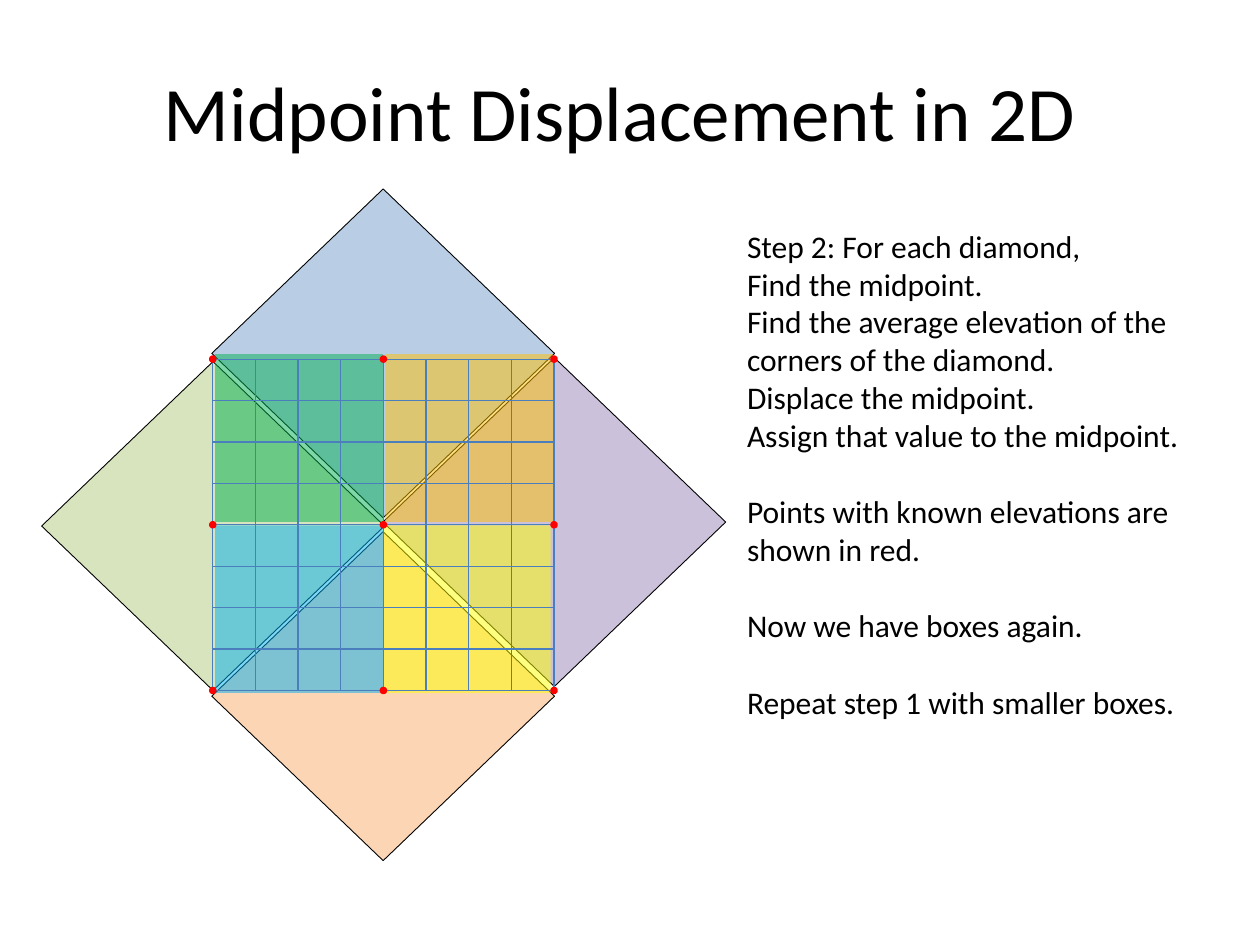
from lxml.etree import SubElement
from pptx import Presentation
from pptx.dml.color import RGBColor
from pptx.enum.shapes import MSO_CONNECTOR as Connector, MSO_SHAPE as Shape
from pptx.enum.text import MSO_ANCHOR as Anchor, MSO_AUTO_SIZE as AutoSize, PP_ALIGN as Align
from pptx.oxml.ns import qn
from pptx.util import Cm, Pt


def paint(shape, fill, line=None, width=0.5, opacity=100):
    shape.shadow.inherit = False
    shape.fill.solid()
    shape.fill.fore_color.rgb = RGBColor.from_string(fill)
    if opacity < 100:
        color = shape.fill._xPr.find(qn("a:solidFill"))[0]
        SubElement(color, qn("a:alpha"), val=str(opacity * 1000))
    if line:
        shape.line.color.rgb = RGBColor.from_string(line)
        shape.line.width = Pt(width)
    else:
        shape.line.fill.background()


def write(paragraph, text, size=18, color="000000", align=Align.LEFT, before=0):
    paragraph.alignment = align
    paragraph.space_before = Pt(before)
    run = paragraph.add_run()
    run.text = text
    run.font.name = "Calibri"
    run.font.size = Pt(size)
    run.font.color.rgb = RGBColor.from_string(color)


prs = Presentation()
prs.slide_width, prs.slide_height = Cm(25.4), Cm(19.05)
slide = prs.slides.add_slide(prs.slide_layouts[5])
shapes = slide.shapes

# Title
title = shapes.title
title.left, title.top, title.width, title.height = Cm(1.07), Cm(0.64), Cm(22.86), Cm(3.18)
title.text_frame.vertical_anchor = Anchor.MIDDLE
write(title.text_frame.paragraphs[0], "Midpoint Displacement in 2D", size=44, align=Align.CENTER)

# Diamonds around the grid: bottom, left, right, top
for left, top, color in [
    (4.27, 10.72, "FCD5B5"),
    (0.84, 7.29, "D7E4BD"),
    (7.72, 7.21, "CCC1DA"),
    (4.27, 3.81, "B9CDE5"),
]:
    diamond = shapes.add_shape(Shape.DIAMOND, Cm(left), Cm(top), Cm(6.91), Cm(6.63))
    paint(diamond, color, line="000000")

# Explanation; a gap of one line opens each new thought
LINE_GAP = 22
explanation = shapes.add_textbox(Cm(14.81), Cm(4.45), Cm(10.16), Cm(10.26)).text_frame
explanation.word_wrap = True
explanation.auto_size = AutoSize.SHAPE_TO_FIT_TEXT
steps = [
    ("Step 2: For each diamond,", 0),
    ("Find the midpoint.", 0),
    ("Find the average elevation of the corners of the diamond.", 0),
    ("Displace the midpoint.", 0),
    ("Assign that value to the midpoint.", 0),
    ("Points with known elevations are shown in red.", LINE_GAP),
    ("Now we have boxes again.", LINE_GAP),
    ("Repeat step 1 with smaller boxes.", LINE_GAP),
]
for i, (step, gap) in enumerate(steps):
    paragraph = explanation.add_paragraph() if i else explanation.paragraphs[0]
    write(paragraph, step, before=gap)

# Translucent boxes, one per quarter of the grid
for left, top, color in [
    (4.34, 7.14, "00B050"),
    (7.77, 7.14, "FFC000"),
    (7.72, 10.59, "FFFF00"),
    (4.34, 10.59, "00B0F0"),
]:
    box = shapes.add_shape(Shape.RECTANGLE, Cm(left), Cm(top), Cm(3.38), Cm(3.38))
    paint(box, color, opacity=50)

# Grid of 8 by 8 cells
CELLS = 8
GRID_LEFT, GRID_TOP, GRID_WIDTH, GRID_HEIGHT = 4.29, 7.24, 6.88, 6.68
grid_right, grid_bottom = GRID_LEFT + GRID_WIDTH, GRID_TOP + GRID_HEIGHT
xs = [GRID_LEFT + GRID_WIDTH * i / CELLS for i in range(CELLS + 1)]
ys = [GRID_TOP + GRID_HEIGHT * i / CELLS for i in range(CELLS + 1)]
rows = [(GRID_LEFT, y, grid_right, y) for y in ys]
columns = [(x, grid_bottom, x, GRID_TOP) for x in xs]
grid = shapes.add_group_shape()
for ends in rows + columns:
    grid_line = grid.shapes.add_connector(Connector.STRAIGHT, *map(Cm, ends))
    grid_line.line.color.rgb = RGBColor.from_string("4B7EBC")
    grid_line.line.width = Pt(0.75)
    SubElement(grid_line._element.spPr, qn("a:effectLst"))

# Known elevations at the corners, edge midpoints and centre
DOT = 0.08
for y in ys[::CELLS // 2]:
    for x in xs[::CELLS // 2]:
        known = shapes.add_shape(Shape.OVAL, Cm(x - DOT / 2), Cm(y - DOT / 2), Cm(DOT), Cm(DOT))
        paint(known, "FF0000", line="FF0000", width=2)

prs.save("out.pptx")
